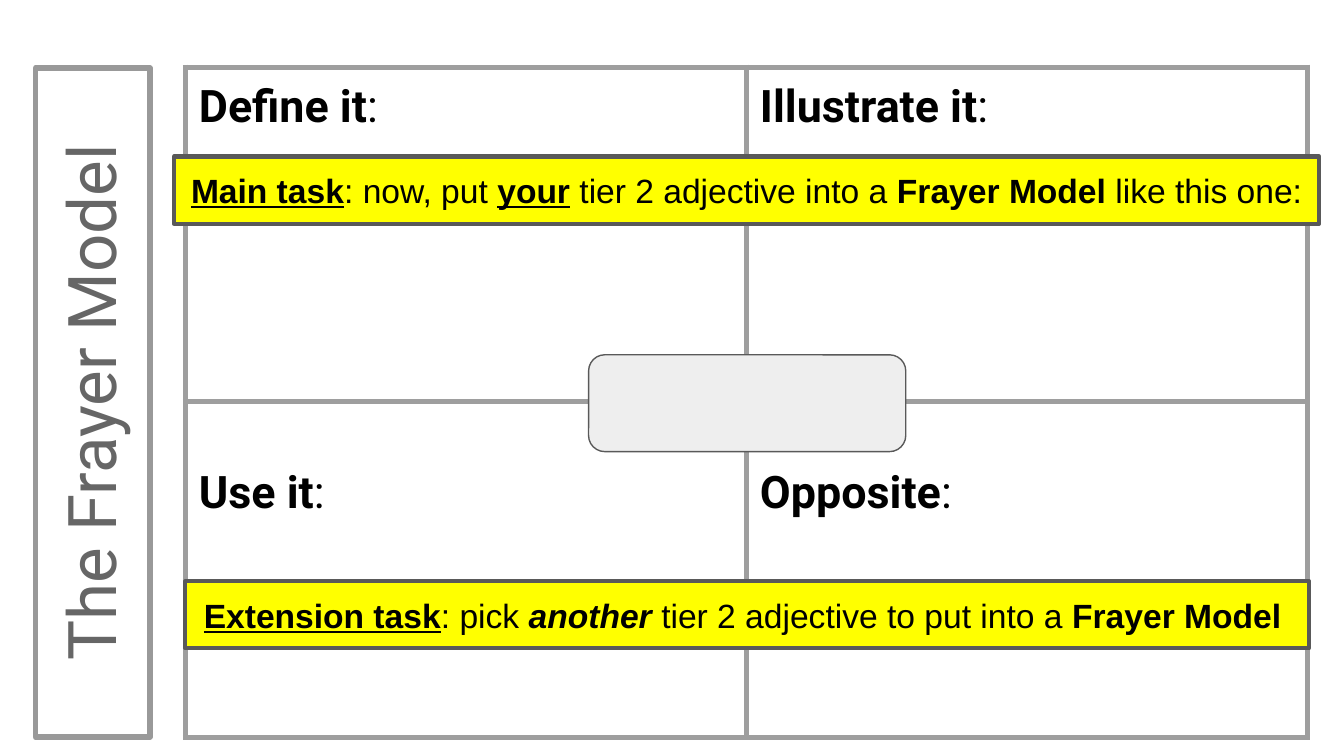
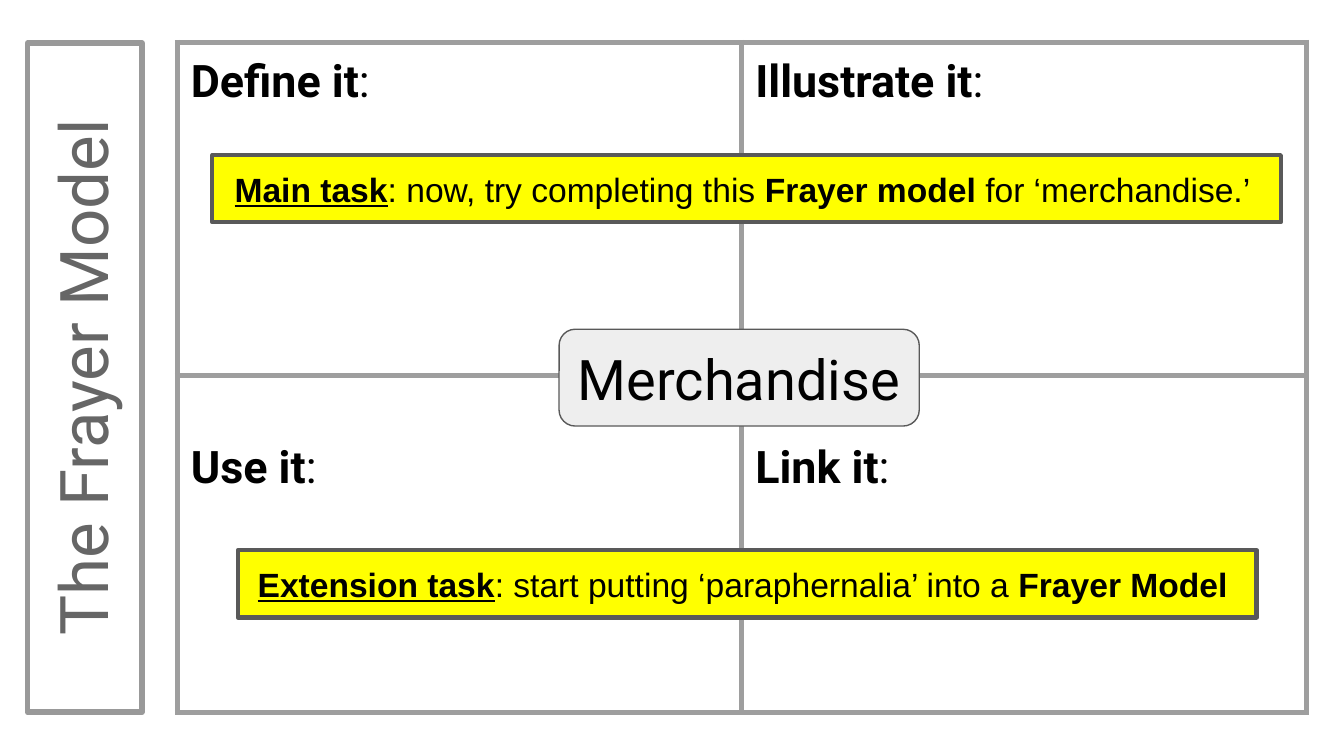
"""Builds two Frayer Model task slides."""
from dataclasses import dataclass
from typing import NamedTuple

from lxml.etree import SubElement
from pptx import Presentation
from pptx.dml.color import RGBColor
from pptx.enum.shapes import MSO_SHAPE as Preset
from pptx.enum.text import MSO_ANCHOR as Anchor, MSO_AUTO_SIZE as AutoSize, PP_ALIGN as Align
from pptx.oxml.ns import qn
from pptx.util import Emu, Pt

PX = 4572
SLIDE_WIDTH, SLIDE_HEIGHT = 2000, 1125
INSET = 20
BLANK_LINE = 78
BORDER_POINTS = 3

BLACK = RGBColor(0x00, 0x00, 0x00)
YELLOW = RGBColor(0xFF, 0xFF, 0x00)
PALE_GREY = RGBColor(0xEE, 0xEE, 0xEE)
GRID_GREY = RGBColor(0x9E, 0x9E, 0x9E)
FRAME_GREY = RGBColor(0x99, 0x99, 0x99)
TEXT_GREY = RGBColor(0x66, 0x66, 0x66)
DARK_GREY = RGBColor(0x59, 0x59, 0x59)


class Box(NamedTuple):
    left: int
    top: int
    width: int
    height: int

    def emu(self) -> list[Emu]:
        return [Emu(length * PX) for length in self]


class Span(NamedTuple):
    text: str
    marks: str = ""


class Font(NamedTuple):
    name: str
    size: int
    color: RGBColor = BLACK


class Look(NamedTuple):
    preset: Preset
    fill: RGBColor | None
    line: RGBColor
    line_points: float
    font: Font
    anchor: Anchor = Anchor.TOP


@dataclass(frozen=True)
class Task:
    box: Box
    spans: list[Span]


@dataclass(frozen=True)
class FrayerSlide:
    grid: Box
    row_heights: tuple[int, int]
    headings: list[list[str]]
    word_box: Box
    word: str
    title_box: Box
    tasks: list[Task]


HEADING_FONT = Font("Roboto", 24)
TITLE = Look(Preset.RECTANGLE, None, FRAME_GREY, 3, Font("Roboto", 36, TEXT_GREY))
WORD = Look(Preset.FLOWCHART_ALTERNATE_PROCESS, PALE_GREY, DARK_GREY, 0.75,
            Font("Roboto", 30), Anchor.MIDDLE)
TASK = Look(Preset.RECTANGLE, YELLOW, DARK_GREY, 2.25, Font("Arial", 18))

SLIDES = [
    FrayerSlide(
        grid=Box(276, 100, 1670, 998),
        row_heights=(497, 501),
        headings=[["Define it", "Illustrate it"], ["Use it", "Opposite"]],
        word_box=Box(876, 528, 472, 144),
        word="",
        title_box=Box(-360, 514, 996, 170),
        tasks=[
            Task(Box(259, 233, 1704, 100), [
                Span("Main task", "bu"), Span(": now, put "), Span("your", "bu"),
                Span(" tier 2 adjective into a "), Span("Frayer Model", "b"),
                Span(" like this one: ")]),
            Task(Box(276, 865, 1672, 100), [
                Span("Extension task", "bu"), Span(": pick "), Span("another ", "bi"),
                Span("tier 2 adjective to put into a "), Span("Frayer Model ", "b")]),
        ],
    ),
    FrayerSlide(
        grid=Box(264, 63, 1680, 998),
        row_heights=(496, 502),
        headings=[["Define it", "Illustrate it"], ["Use it", "Link it"]],
        word_box=Box(832, 490, 536, 144),
        word="Merchandise",
        title_box=Box(-372, 477, 996, 170),
        tasks=[
            Task(Box(316, 231, 1590, 100), [
                Span("Main task", "bu"), Span(": now, try completing this "),
                Span("Frayer model", "b"), Span(" for ‘merchandise.’ ")]),
            Task(Box(354, 819, 1516, 100), [
                Span("Extension task", "bu"),
                Span(": start putting ‘paraphernalia’ into a "),
                Span("Frayer Model ", "b")]),
        ],
    ),
]


def write_spans(paragraph, spans: list[Span], font: Font) -> None:
    for span in spans:
        run = paragraph.add_run()
        run.text = span.text
        run.font.name = font.name
        run.font.size = Pt(font.size)
        run.font.color.rgb = font.color
        run.font.bold = "b" in span.marks
        run.font.italic = "i" in span.marks
        run.font.underline = "u" in span.marks


def set_insets(holder, top: int = INSET) -> None:
    holder.margin_left = holder.margin_right = holder.margin_bottom = Emu(INSET * PX)
    holder.margin_top = Emu(top * PX)


def add_box(slide, box: Box, look: Look, spans: list[Span]):
    shape = slide.shapes.add_shape(look.preset, *box.emu())
    shape.shadow.inherit = False
    if look.fill is None:
        shape.fill.background()
    else:
        shape.fill.solid()
        shape.fill.fore_color.rgb = look.fill
    shape.line.color.rgb = look.line
    shape.line.width = Pt(look.line_points)
    text_frame = shape.text_frame
    text_frame.word_wrap = True
    text_frame.vertical_anchor = look.anchor
    set_insets(text_frame)
    paragraph = text_frame.paragraphs[0]
    paragraph.alignment = Align.CENTER
    write_spans(paragraph, spans, look.font)
    return shape


def add_borders(cell) -> None:
    properties = cell._tc.get_or_add_tcPr()
    for side in ("a:lnL", "a:lnR", "a:lnT", "a:lnB"):
        line = SubElement(properties, qn(side), w=str(Pt(BORDER_POINTS)))
        fill = SubElement(line, qn("a:solidFill"))
        SubElement(fill, qn("a:srgbClr"), val=str(GRID_GREY))


def add_grid(slide, content: FrayerSlide) -> None:
    table = slide.shapes.add_table(2, 2, *content.grid.emu()).table
    table.first_row = table.horz_banding = False
    for column in table.columns:
        column.width = Emu(content.grid.width * PX // 2)
    for row_index, (height, labels) in enumerate(zip(content.row_heights, content.headings)):
        table.rows[row_index].height = Emu(height * PX)
        for column_index, label in enumerate(labels):
            cell = table.cell(row_index, column_index)
            set_insets(cell, INSET + row_index * BLANK_LINE)
            add_borders(cell)
            cell.fill.background()
            write_spans(cell.text_frame.paragraphs[0], [Span(label, "b"), Span(":")],
                        HEADING_FONT)


def build_slide(presentation, content: FrayerSlide) -> None:
    slide = presentation.slides.add_slide(presentation.slide_layouts[6])
    add_grid(slide, content)
    add_box(slide, content.word_box, WORD, [Span(content.word)] if content.word else [])
    title = add_box(slide, content.title_box, TITLE, [Span("The Frayer Model")])
    title.rotation = 270
    for task in content.tasks:
        shape = add_box(slide, task.box, TASK, task.spans)
        shape.text_frame.auto_size = AutoSize.SHAPE_TO_FIT_TEXT


def main() -> None:
    presentation = Presentation()
    presentation.slide_width = Emu(SLIDE_WIDTH * PX)
    presentation.slide_height = Emu(SLIDE_HEIGHT * PX)
    for content in SLIDES:
        build_slide(presentation, content)
    presentation.save("out.pptx")


if __name__ == "__main__":
    main()
